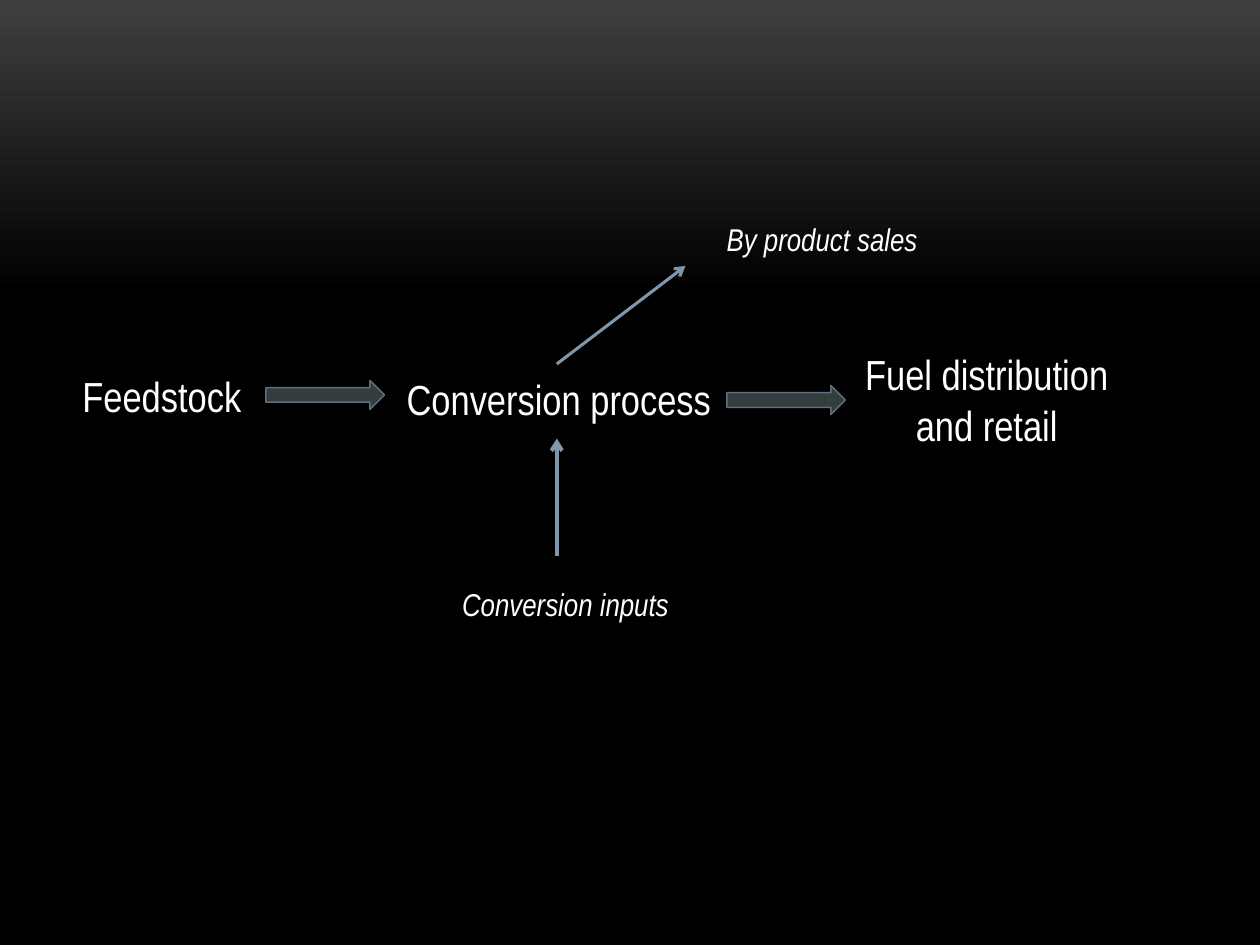
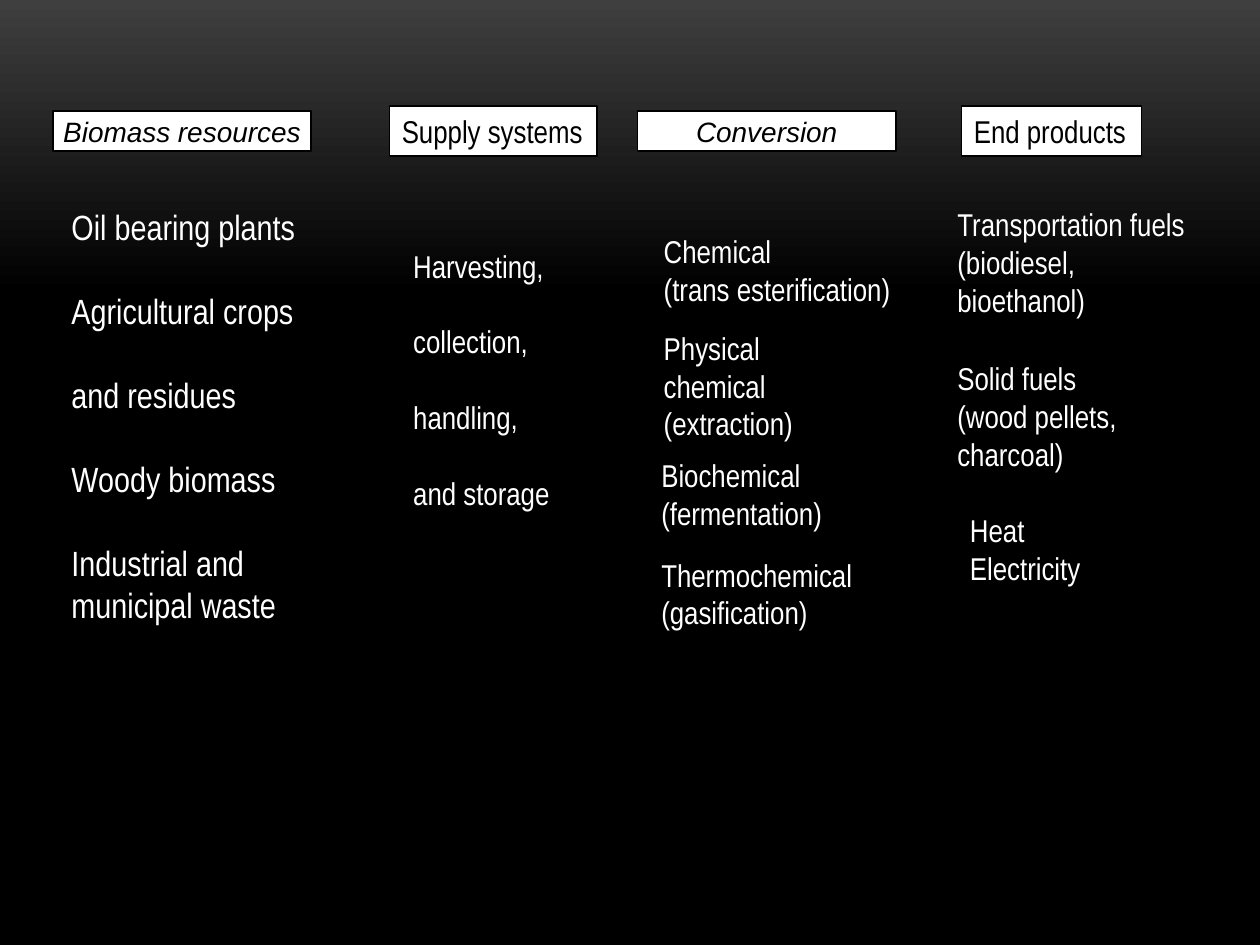
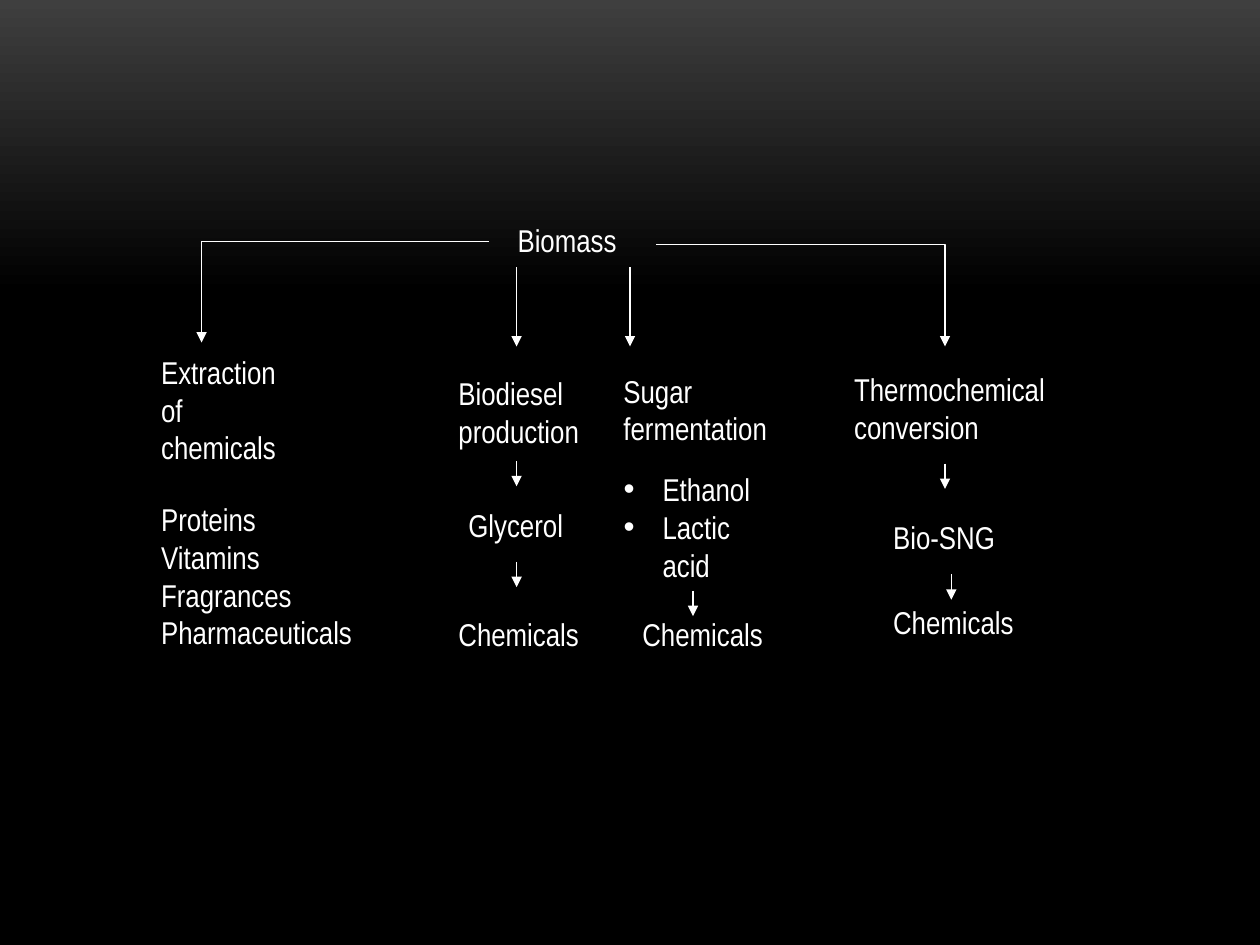
from lxml import etree
from pptx import Presentation
from pptx.dml.color import RGBColor
from pptx.enum.shapes import MSO_CONNECTOR, MSO_SHAPE
from pptx.enum.text import MSO_ANCHOR, MSO_AUTO_SIZE, PP_ALIGN
from pptx.oxml.ns import qn
from pptx.util import Pt

WHITE = RGBColor(0xFF, 0xFF, 0xFF)
BLACK = RGBColor(0x00, 0x00, 0x00)
GREY = RGBColor(0x3F, 0x3F, 0x3F)
SLATE = RGBColor(0x34, 0x3C, 0x3D)
EDGE = RGBColor(0x5D, 0x70, 0x80)
STEEL = RGBColor(0x7E, 0x97, 0xAD)

NARROW, ARIAL = "Arial Narrow", "Arial"
RECT, ARROW = MSO_SHAPE.RECTANGLE, MSO_SHAPE.RIGHT_ARROW
STRAIGHT, ELBOW = MSO_CONNECTOR.STRAIGHT, MSO_CONNECTOR.ELBOW
LEFT, CENTER = PP_ALIGN.LEFT, PP_ALIGN.CENTER
TOP, MIDDLE = MSO_ANCHOR.TOP, MSO_ANCHOR.MIDDLE
GROW, FIXED = MSO_AUTO_SIZE.SHAPE_TO_FIT_TEXT, MSO_AUTO_SIZE.NONE

LINE = 21.6  # height of an 18 pt text line
ONE, TWO, THREE = 28.8, 51, 72.7  # heights of boxes with one to three lines
STEP = 14.4  # length of a short arrow


def shift(org, box):
    """Move a box given relative to a region's origin onto the slide."""
    x, y, wide, high = box
    return [Pt(v) for v in (org[0] + x, org[1] + y, wide, high)]


def shape(slide, kind, place, fill, edge):
    item = slide.shapes.add_shape(kind, *place)
    item.shadow.inherit = False
    item.fill.solid()
    item.fill.fore_color.rgb = fill
    item.line.color.rgb = edge
    item.line.width = Pt(0.85)
    return item


def bullet(para):
    props = para._p.get_or_add_pPr()
    props.set("marL", str(Pt(22.3)))
    props.set("indent", str(-Pt(22.3)))
    etree.SubElement(props, qn("a:buFont")).set("typeface", ARIAL)
    etree.SubElement(props, qn("a:buChar")).set("char", "•")


def text(slide, words, place, size=18, font=NARROW, color=WHITE, italic=False,
         align=LEFT, anchor=TOP, wrap=True, gap=0, dots=False, fit=GROW,
         fill=None):
    """Write one paragraph (a string) or several (a list)."""
    if fill is None:
        item = slide.shapes.add_textbox(*place)
    else:
        item = shape(slide, RECT, place, fill, BLACK)
    frame = item.text_frame
    frame.word_wrap, frame.auto_size = wrap, fit
    frame.vertical_anchor = anchor
    paras = [words] if isinstance(words, str) else words
    for i, words in enumerate(paras):
        para = frame.add_paragraph() if i else frame.paragraphs[0]
        para.text = words
        para.alignment = align
        if i and gap:
            para.space_before = Pt(gap)
        if dots:
            bullet(para)
        for run in para.runs:
            run.font.name, run.font.size = font, Pt(size)
            run.font.italic = italic
            run.font.color.rgb = color


def link(slide, org, start, end, color=WHITE, width=0.75, head="triangle",
         kind=STRAIGHT):
    ends = [Pt(o + v) for point in (start, end) for o, v in zip(org, point)]
    item = slide.shapes.add_connector(kind, *ends)
    item.line.color.rgb = color
    item.line.width = Pt(width)
    props = item._element.spPr
    if kind == ELBOW:
        props.find(qn("a:prstGeom")).set("prst", "bentConnector2")
    etree.SubElement(props.find(qn("a:ln")), qn("a:tailEnd")).set("type", head)
    etree.SubElement(props, qn("a:effectLst"))


def flow(slide, org):
    """Feedstock to retail chain with its side input and output."""
    stages = [
        ("Feedstock", (0, 86, 120, 36), LEFT, True),
        ("Conversion process", (183.9, 88.2, 190.8, 36), CENTER, False),
        (["Fuel distribution", "and retail"], (343.8, 73.8, 360, 65.5),
         CENTER, True),
    ]
    for words, box, align, wrap in stages:
        text(slide, words, shift(org, box), size=24, align=align, wrap=wrap)
    for x, y in ((112, 95.4), (375.4, 98.3)):
        shape(slide, ARROW, shift(org, (x, y, 67.7, 16.6)), SLATE, EDGE)
    sides = [
        ("By product sales", (368.2, 0.4, 125.3, ONE)),
        ("Conversion inputs", (217, 208.5, 134, ONE)),
    ]
    for words, box in sides:
        text(slide, words, shift(org, box), italic=True, wrap=False)
    mid = 278.2
    link(slide, org, (mid, 86), (351.7, 30), STEEL, 1.75, "arrow")
    link(slide, org, (mid, 195.5), (mid, 128.6), STEEL, 2.25, "arrow")


def heads(slide, org):
    for words, x in (("Biomass resources", 0.2), ("Conversion", 334.3)):
        text(slide, words, shift(org, (x, 3.4, 147.6, 23)), size=16,
             font=ARIAL, italic=True, color=BLACK, fill=WHITE, align=CENTER,
             anchor=MIDDLE, wrap=False, fit=FIXED)
    for words, x, wide in (("Supply systems", 192.5, 118.8),
                           ("End products", 519.4, 103)):
        text(slide, words, shift(org, (x, 0.5, wide, ONE)), color=BLACK,
             fill=WHITE, wrap=False)


def lists(slide, org):
    """The four columns of entries below the heads."""
    text(slide, ["Oil bearing plants", "Agricultural crops", "and residues",
                 "Woody biomass", "Industrial and\nmunicipal waste"],
         shift(org, (3.8, 53.8, 144, 225)), size=20, gap=24)
    text(slide, ["Harvesting,", "collection,", "handling,", "and storage"],
         shift(org, (199, 77.5, 102.2, 160)), gap=LINE)
    notes = [
        ("Chemical\n(trans esterification)", (342.2, 68.9, 180, TWO)),
        ("Physical chemical\n(extraction)", (342.2, 124.3, 131, THREE)),
        (["Biochemical", "(fermentation)"], (340.8, 197, 113.8, TWO)),
        ("Thermochemical\n(gasification)", (340.8, 253.9, 131, TWO)),
        (["Transportation fuels", "(biodiesel, bioethanol)"],
         (510, 53.8, 149.8, THREE)),
        ("Solid fuels\n(wood pellets, charcoal)", (510, 141.6, 158.4, THREE)),
        ("Heat\nElectricity", (517.2, 228.7, 88.6, TWO)),
    ]
    for words, box in notes:
        text(slide, words, shift(org, box))


def tree(slide, org):
    """Biomass branching into four routes."""
    wide = [
        ("Extraction\nof chemicals", (0, 75, 84.2, THREE)),
        (["Proteins", "Vitamins", "Fragrances", "Pharmaceuticals"],
         (0, 159.2, 126, 94.3)),
        ("Biodiesel\nproduction", (169.9, 87.2, 94.3, TWO)),
        ("Sugar\nfermentation", (264.2, 85.8, 108, TWO)),
    ]
    for words, box in wide:
        text(slide, words, shift(org, box))
    tight = [
        ("Biomass", (203.7, 0, 72, ONE)),
        ("Thermochemical\nconversion", (396, 85, 124.6, TWO)),
        ("Glycerol", (175.6, 162.8, 69.1, ONE)),
        ("Bio-SNG", (418.3, 169.3, 73.4, ONE)),
    ]
    tight += [("Chemicals", (x, y, 84.2, ONE)) for x, y in
              ((169.9, 224.8), (275, 224.8), (418.3, 218.3))]
    for words, box in tight:
        text(slide, words, shift(org, box), wrap=False)
    text(slide, ["Ethanol", "Lactic acid"],
         shift(org, (264.2, 142, 97.2, THREE)), dots=True)

    link(slide, org, (194.4, 15.2), (30.2, 72.8), kind=ELBOW)
    link(slide, org, (290.1, 16.7), (455, 75), kind=ELBOW)
    for x in (210.2, 275):
        link(slide, org, (x, 29.6), (x, 75))
    for x, y in ((210.2, 140.5), (210.2, 198.1), (311, 214.7),
                 (455, 142), (458.6, 205.3)):
        link(slide, org, (x, y), (x, y + STEP))


def backdrop(master):
    fill = master.background.fill
    fill.gradient()
    fill.gradient_angle = 270
    for stop, color, pos in zip(fill.gradient_stops, (GREY, BLACK), (0, 0.31)):
        stop.color.rgb = color
        stop.position = pos


def main():
    deck = Presentation()
    deck.slide_width, deck.slide_height = Pt(720), Pt(540)
    backdrop(deck.slide_master)
    blank = deck.slide_layouts[6]
    plan = [((flow,), (40, 122)), ((heads, lists), (30, 60)),
            ((tree,), (85, 123))]
    for parts, org in plan:
        slide = deck.slides.add_slide(blank)
        for part in parts:
            part(slide, org)
    deck.save("out.pptx")


if __name__ == "__main__":
    main()
